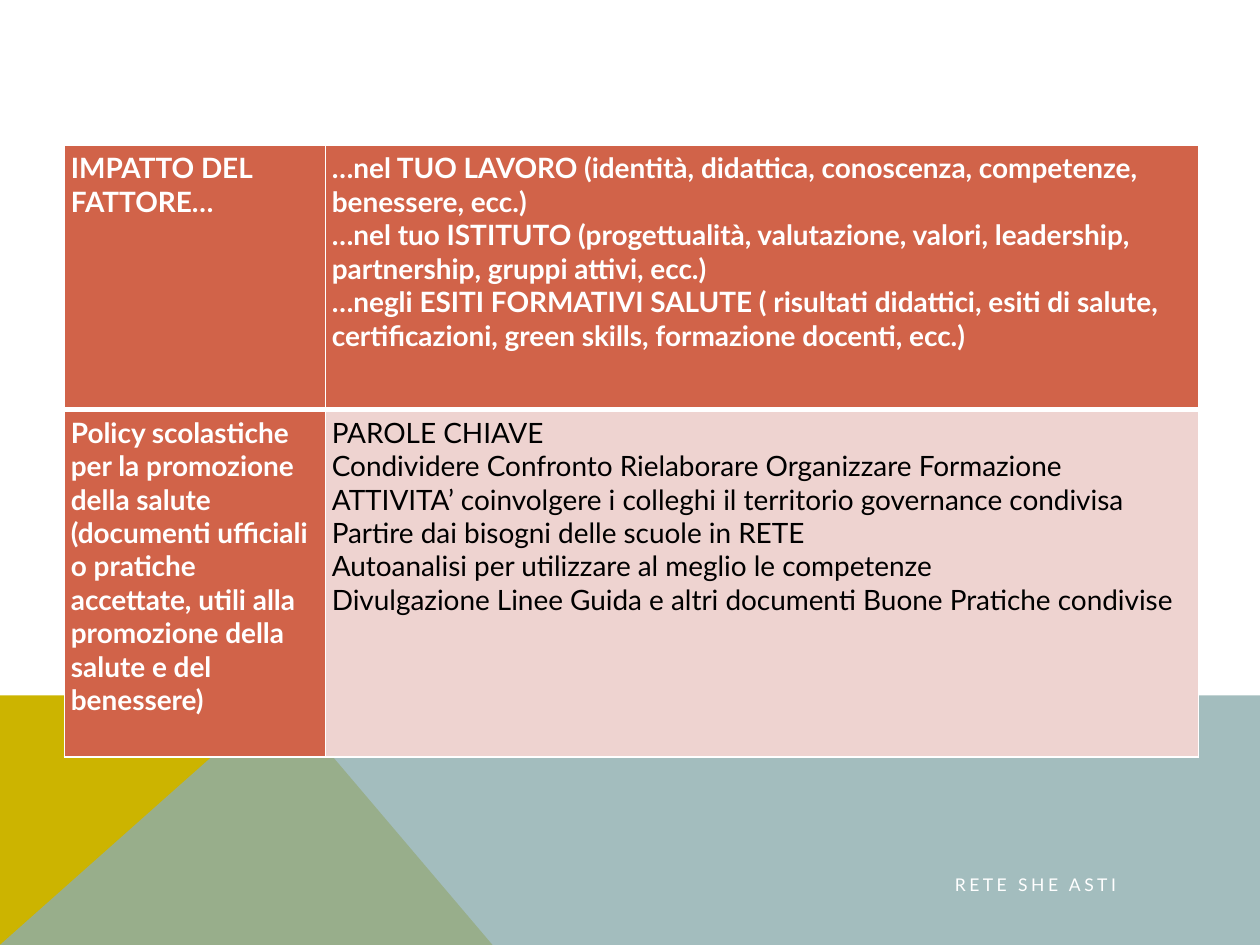
from lxml.etree import SubElement
from pptx import Presentation
from pptx.dml.color import RGBColor
from pptx.enum.text import MSO_ANCHOR, PP_ALIGN
from pptx.oxml.ns import qn
from pptx.util import Cm, Pt

COLOURS = {
    "white": "FFFFFF",
    "black": "000000",
    "olive": "CCB400",
    "teal": "8CADAE",
    "brick": "D16349",
    "pink": "EED3D0",
}
FONT = "Lato"
HEADING = {"size": Pt(16), "bold": True, "name": FONT}
BODY = {"size": Pt(16), "bold": False, "name": FONT}
FOOTER = {"size": Pt(10), "bold": False, "name": FONT}

IMPACT = ["IMPATTO DEL FATTORE…"]
AREAS = [
    "…nel TUO LAVORO (identità, didattica, conoscenza, competenze, benessere, ecc.)",
    "…nel tuo ISTITUTO (progettualità, valutazione, valori, leadership, partnership, gruppi attivi, ecc.)",
    "…negli ESITI FORMATIVI SALUTE ( risultati didattici, esiti di salute, certificazioni, green skills, formazione docenti, ecc.)",
]
POLICY = [
    "Policy scolastiche per la promozione della salute (documenti ufficiali o pratiche accettate, utili alla promozione della salute e del benessere)"
]
KEYWORDS = [
    "PAROLE CHIAVE",
    "Condividere Confronto Rielaborare Organizzare Formazione",
    "ATTIVITA’ coinvolgere i colleghi il territorio governance condivisa",
    "Partire dai bisogni delle scuole in RETE",
    "Autoanalisi per utilizzare al meglio le competenze",
    "Divulgazione Linee Guida e altri documenti Buone Pratiche condivise",
]


def rgb(name):
    return RGBColor.from_string(COLOURS[name])


def write_lines(text_frame, lines, font_format, colour):
    for index, line in enumerate(lines):
        paragraph = text_frame.paragraphs[0] if index == 0 else text_frame.add_paragraph()
        run = paragraph.add_run()
        run.text = line
        for name, value in font_format.items():
            setattr(run.font, name, value)
        run.font.color.rgb = rgb(colour)


def add_polygon(slide, points, colour, opacity=100):
    corners = [(Cm(x), Cm(y)) for x, y in points]
    builder = slide.shapes.build_freeform(*corners[0], scale=1.0)
    builder.add_line_segments(corners[1:], close=True)
    shape = builder.convert_to_shape()
    shape.shadow.inherit = False
    shape.fill.solid()
    shape.fill.fore_color.rgb = rgb(colour)
    shape.line.fill.background()
    if opacity < 100:
        colour_element = shape.fill._xPr.find(".//" + qn("a:srgbClr"))
        SubElement(colour_element, qn("a:alpha"), val=str(opacity * 1000))


def add_backdrop(slide, left, top, width, height):
    right, bottom = left + width, top + height
    peak = (left + 5.66, top)
    corner = (left, bottom)
    add_polygon(slide, [corner, (left, top), peak, (left + 9.93, bottom)], "olive")
    add_polygon(slide, [corner, peak, (right, top), (right, bottom)], "teal", 80)


def set_borders(cell, widths):
    properties = cell._tc.get_or_add_tcPr()
    for side, width in widths.items():
        line = SubElement(properties, qn(f"a:ln{side}"), w=str(Pt(width)))
        fill = SubElement(line, qn("a:solidFill"))
        SubElement(fill, qn("a:srgbClr"), val=COLOURS["white"])


def add_factor_table(slide, left, top, width, height):
    rows = [
        [(IMPACT, HEADING, "white", "brick"), (AREAS, HEADING, "white", "brick")],
        [(POLICY, HEADING, "white", "brick"), (KEYWORDS, BODY, "black", "pink")],
    ]
    borders = [
        {"L": 1, "R": 1, "T": 1, "B": 3},
        {"L": 1, "R": 1, "T": 3, "B": 1},
    ]
    margins = {f"margin_{side}": Cm(0.13) for side in ("left", "right", "top", "bottom")}
    table = slide.shapes.add_table(2, 2, Cm(left), Cm(top), Cm(width), Cm(height)).table
    first_width, first_height = 5.26, 5.33
    table.columns[0].width = Cm(first_width)
    table.columns[1].width = Cm(width - first_width)
    table.rows[0].height = Cm(first_height)
    table.rows[1].height = Cm(height - first_height)
    for row_index, row in enumerate(rows):
        for column_index, (lines, font_format, colour, fill) in enumerate(row):
            cell = table.cell(row_index, column_index)
            for name, value in margins.items():
                setattr(cell, name, value)
            set_borders(cell, borders[row_index])
            cell.fill.solid()
            cell.fill.fore_color.rgb = rgb(fill)
            write_lines(cell.text_frame, lines, font_format, colour)


def add_footer(slide, left, top, width, height):
    text_frame = slide.shapes.add_textbox(Cm(left), Cm(top), Cm(width), Cm(height)).text_frame
    text_frame.word_wrap = True
    text_frame.vertical_anchor = MSO_ANCHOR.MIDDLE
    write_lines(text_frame, ["RETE SHE ASTI "], FOOTER, "white")
    paragraph = text_frame.paragraphs[0]
    paragraph.alignment = PP_ALIGN.RIGHT
    paragraph.runs[0].font._element.set("spc", "200")


def main():
    presentation = Presentation()
    presentation.slide_width = Cm(25.4)
    presentation.slide_height = Cm(19.05)
    slide = presentation.slides.add_slide(presentation.slide_layouts[6])
    add_backdrop(slide, 0, 14.02, 25.4, 5.03)
    add_factor_table(slide, 1.3, 2.92, 22.86, 12.34)
    add_footer(slide, 9.78, 17.45, 13.13, 0.76)
    presentation.save("out.pptx")


if __name__ == "__main__":
    main()
